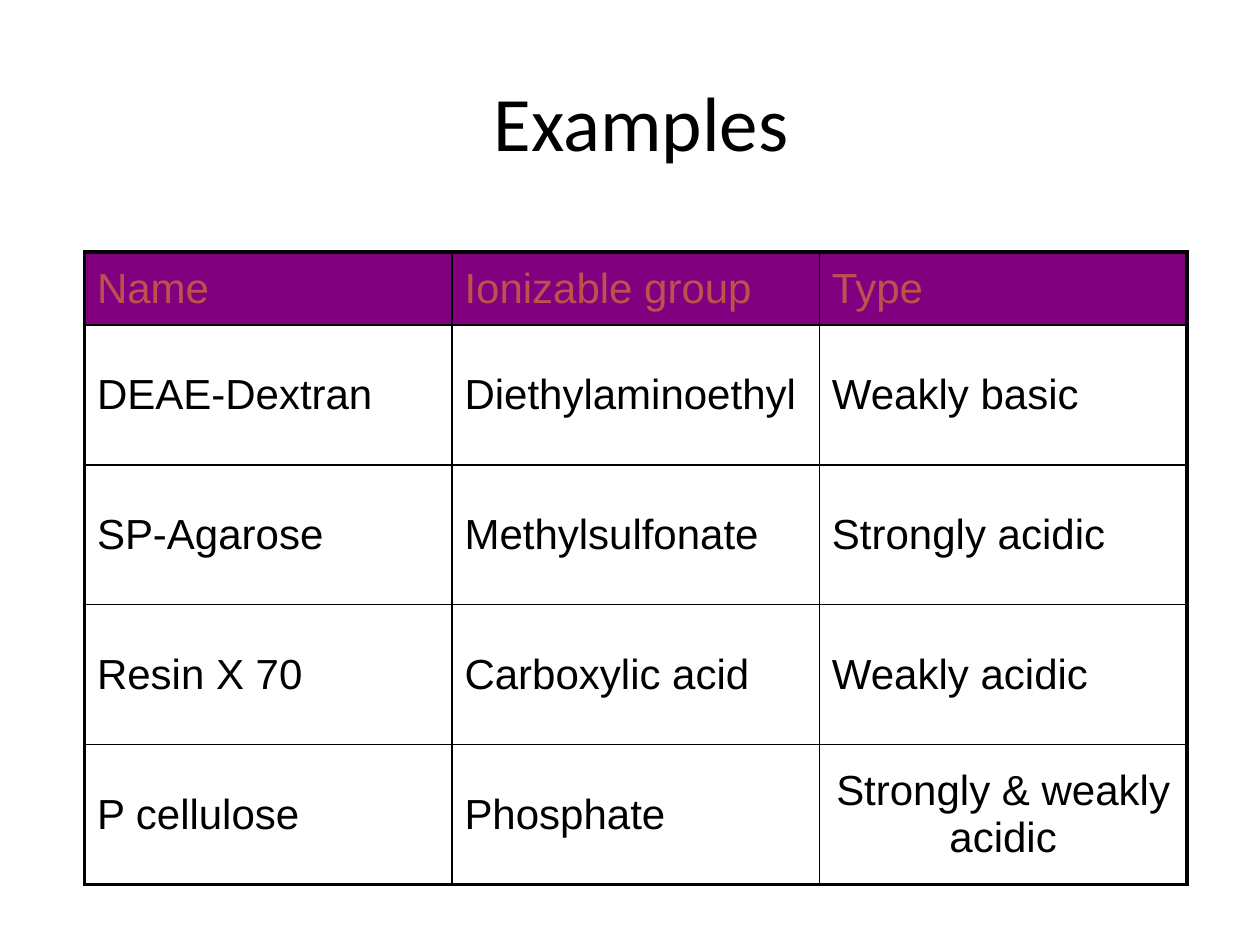
from lxml import etree
from pptx import Presentation, util as u
from pptx.dml.color import RGBColor
from pptx.enum import text
from pptx.oxml.ns import qn

# Content
TITLE = "Examples"
ROWS = [
    ("Name", "Ionizable group", "Type"),
    ("DEAE-Dextran", "Diethylaminoethyl", "Weakly basic"),
    ("SP-Agarose", "Methylsulfonate", "Strongly acidic"),
    ("Resin X 70", "Carboxylic acid", "Weakly acidic"),
    ("P cellulose", "Phosphate", "Strongly & weakly acidic"),
]
CENTERED = {(4, 2)}

# Theme
THEME = {
    "title": {"name": "Calibri", "size": u.Pt(44), "color": "000000"},
    "header": {"name": "Arial", "size": u.Pt(24), "color": "C0504D"},
    "body": {"name": "Arial", "size": u.Pt(24), "color": "000000"},
    "header_fill": "800080",
    "body_fill": "FFFFFF",
    "border": "000000",
    "outer": u.Pt(2.25),
    "inner": u.Pt(1),
}

# Layout in inches
TITLE_BOX = (0.83, 0.33, 8.52, 1.25)
TABLE_LEFT, TABLE_TOP, TABLE_WIDTH = 0.67, 2, 8.75
HEADER_HEIGHT, BODY_HEIGHT = 0.58, 1.11


def write(p, words, style, align):
    p.alignment = align
    r = p.add_run()
    r.text = words
    for key, value in THEME[style].items():
        if key == "color":
            r.font.color.rgb = RGBColor.from_string(value)
        else:
            setattr(r.font, key, value)


def add_border(cell, side, width):
    tc_pr = cell._tc.get_or_add_tcPr()
    ln = etree.SubElement(tc_pr, qn(f"a:ln{side}"), w=str(int(width)))
    fill = etree.SubElement(ln, qn("a:solidFill"))
    etree.SubElement(fill, qn("a:srgbClr"), val=THEME["border"])


prs = Presentation()
prs.slide_width, prs.slide_height = u.Inches(10), u.Inches(7.5)
s = prs.slides.add_slide(prs.slide_layouts[6])

# Title
tf = s.shapes.add_textbox(*map(u.Inches, TITLE_BOX)).text_frame
tf.word_wrap = True
tf.vertical_anchor = text.MSO_ANCHOR.MIDDLE
write(tf.paragraphs[0], TITLE, "title", text.PP_ALIGN.CENTER)

# Table grid
n_rows, n_cols = len(ROWS), len(ROWS[0])
heights = [HEADER_HEIGHT] + [BODY_HEIGHT] * (n_rows - 1)
box = (TABLE_LEFT, TABLE_TOP, TABLE_WIDTH, sum(heights))
table = s.shapes.add_table(n_rows, n_cols, *map(u.Inches, box)).table
table.first_row = table.horz_banding = False
for row, height in zip(table.rows, heights):
    row.height = u.Inches(height)
for col in table.columns:
    col.width = u.Inches(TABLE_WIDTH / n_cols)

# Cells: heavy lines around the table, thin lines inside
for i, words in enumerate(ROWS):
    style = "body" if i else "header"
    for j, word in enumerate(words):
        cell = table.cell(i, j)
        cell.vertical_anchor = text.MSO_ANCHOR.MIDDLE
        align = text.PP_ALIGN.CENTER if (i, j) in CENTERED else text.PP_ALIGN.LEFT
        write(cell.text_frame.paragraphs[0], word, style, align)
        edges = {"L": j == 0, "R": j == n_cols - 1, "T": i == 0, "B": i == n_rows - 1}
        for side, is_outer in edges.items():
            add_border(cell, side, THEME["outer" if is_outer else "inner"])
        cell.fill.solid()
        cell.fill.fore_color.rgb = RGBColor.from_string(THEME[f"{style}_fill"])

prs.save("out.pptx")
